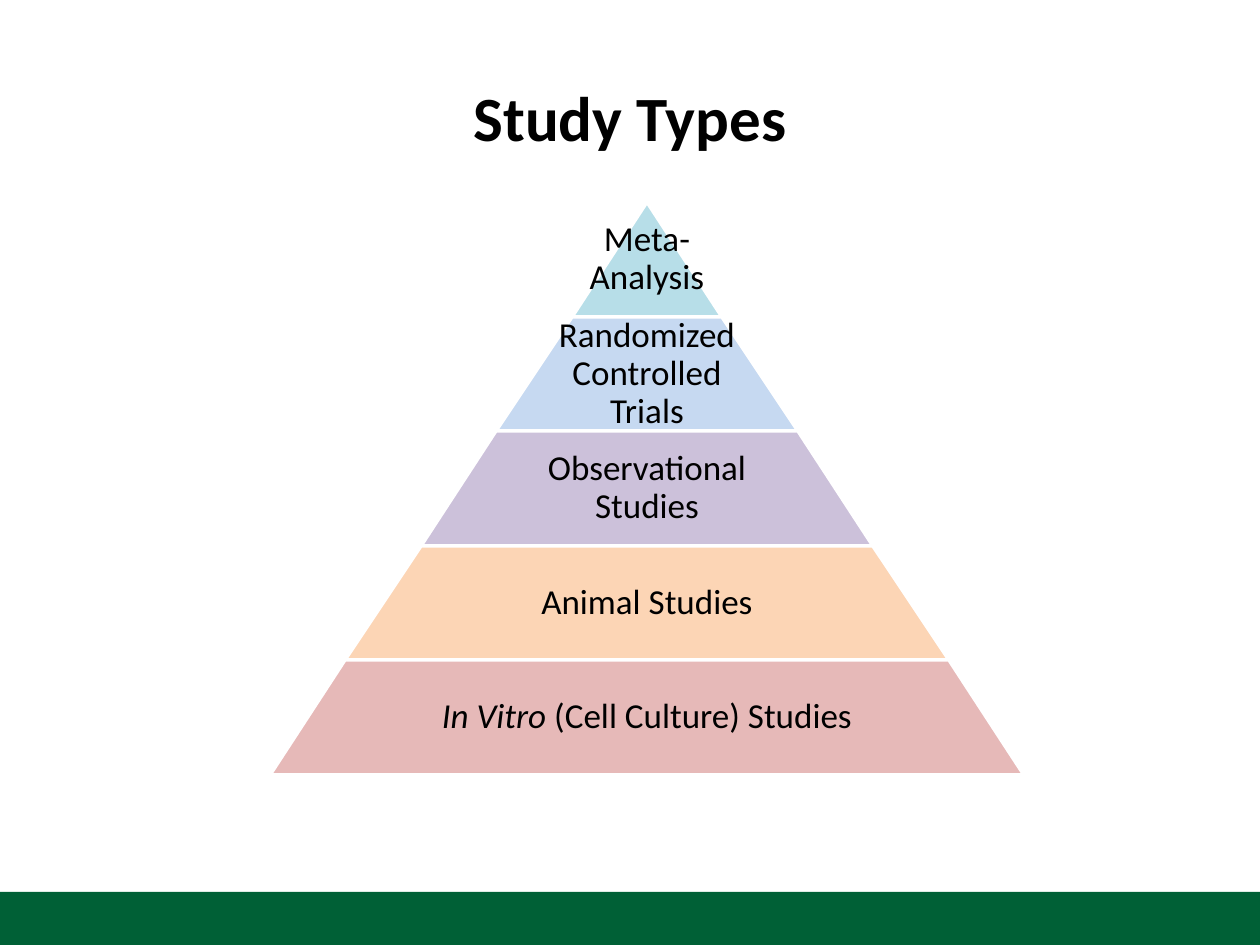
from pptx import Presentation
from pptx.dml.color import RGBColor
from pptx.enum.shapes import MSO_SHAPE
from pptx.enum.text import MSO_ANCHOR, PP_ALIGN
from pptx.util import Pt

RECTANGLE = MSO_SHAPE.RECTANGLE
MIDDLE = MSO_ANCHOR.MIDDLE
CENTER = PP_ALIGN.CENTER

PX = 914400 / 126
WIDTH, HEIGHT = 1260, 945
CENTER_X, APEX_Y, BASE_Y, HALF_BASE = 647, 202, 775, 377
TIERS = [
    ("B7DEE8", [("Meta-Analysis", False)]),
    ("C6D9F1", [("Randomized Controlled Trials", False)]),
    ("CCC1DA", [("Observational Studies", False)]),
    ("FCD5B5", [("Animal Studies", False)]),
    ("E6B9B8", [("In Vitro", True), (" (Cell Culture) Studies", False)]),
]


def write_text(shape, runs, size, bold=False, line_spacing=1.0, inset_x=13, inset_y=6):
    """Fill a shape with one centred paragraph of (text, italic) runs."""
    frame = shape.text_frame
    frame.word_wrap = True
    frame.vertical_anchor = MIDDLE
    frame.margin_left = frame.margin_right = round(inset_x * PX)
    frame.margin_top = frame.margin_bottom = round(inset_y * PX)
    paragraph = frame.paragraphs[0]
    paragraph.alignment = CENTER
    paragraph.line_spacing = line_spacing
    for text, italic in runs:
        run = paragraph.add_run()
        run.text = text
        run.font.name = "Calibri"
        run.font.size = Pt(size)
        run.font.bold = bold
        run.font.italic = italic
        run.font.color.rgb = RGBColor.from_string("000000")


def paint(shape, fill, line=None):
    shape.shadow.inherit = False
    shape.fill.solid()
    shape.fill.fore_color.rgb = RGBColor.from_string(fill)
    if line:
        shape.line.color.rgb = RGBColor.from_string(line)
        shape.line.width = Pt(2)
    else:
        shape.line.fill.background()


presentation = Presentation()
presentation.slide_width = round(WIDTH * PX)
presentation.slide_height = round(HEIGHT * PX)
slide = presentation.slides.add_slide(presentation.slide_layouts[5])

title = slide.shapes.title
title.left, title.top, title.width, title.height = [
    round(length * PX) for length in (63, 38, 1134, 157)
]
write_text(title, [("Study Types", False)], size=36, bold=True)

footer_band = slide.shapes.add_shape(
    RECTANGLE, 0, *[round(length * PX) for length in (892, WIDTH, 53)]
)
paint(footer_band, "006036")

# Each tier is a slice of one triangle, cut at equal heights.
for index, (color, runs) in enumerate(TIERS):
    top, bottom = [
        round(APEX_Y + (BASE_Y - APEX_Y) * step / len(TIERS)) for step in (index, index + 1)
    ]
    half_top, half_bottom = [
        round(HALF_BASE * step / len(TIERS)) for step in (index, index + 1)
    ]
    builder = slide.shapes.build_freeform(CENTER_X - half_bottom, bottom, scale=PX)
    builder.add_line_segments([
        (CENTER_X - half_top, top),
        (CENTER_X + half_top, top),
        (CENTER_X + half_bottom, bottom),
    ])
    tier = builder.convert_to_shape()
    paint(tier, color, line="FFFFFF")
    side_inset = 3 + round(0.35 * half_bottom) if index else 3
    write_text(tier, runs, size=20, line_spacing=0.9, inset_x=side_inset, inset_y=3)

presentation.save("out.pptx")
